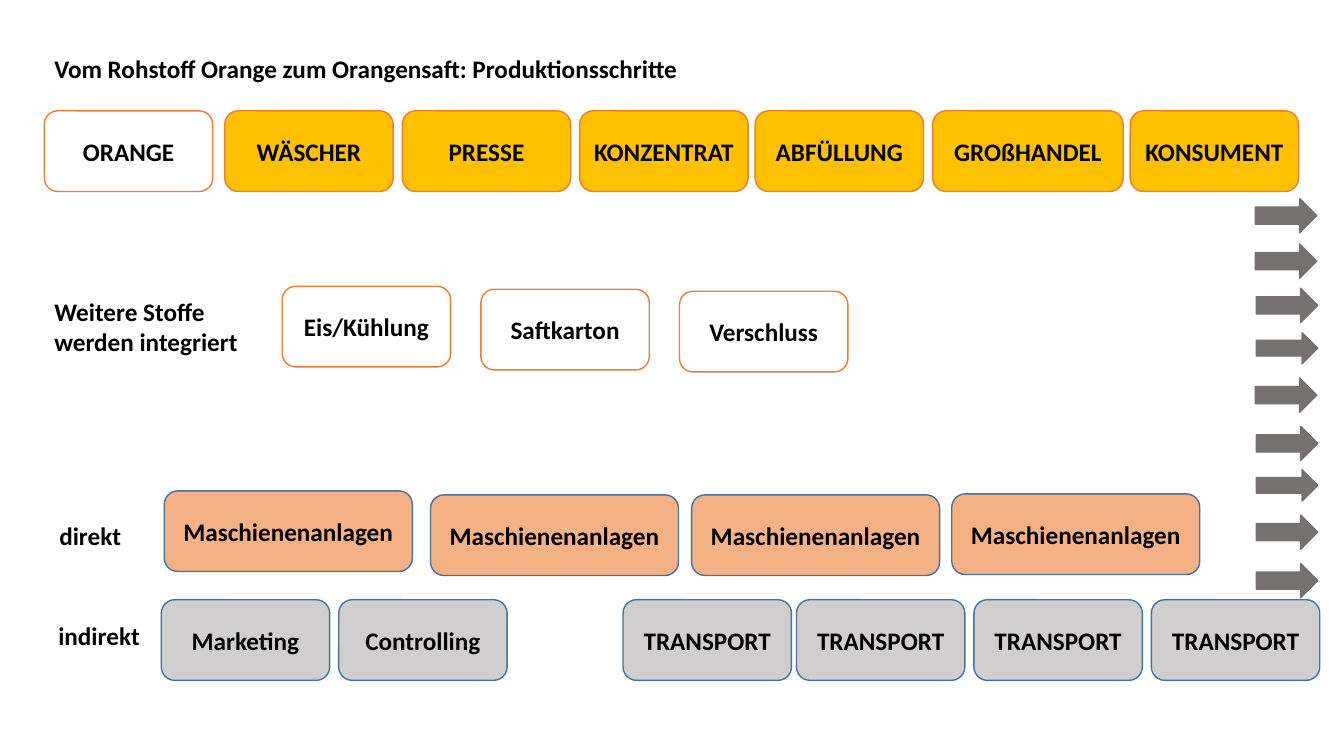
"""Build the slide on the production steps from orange to orange juice."""
from pptx import Presentation
from pptx.dml.color import RGBColor
from pptx.enum.shapes import MSO_SHAPE as SHAPE
from pptx.enum.text import MSO_ANCHOR as ANCHOR, PP_ALIGN as ALIGN
from pptx.util import Inches, Pt

COLORS = {
    "text": "000000",
    "white": "FFFFFF",
    "yellow": "FFC000",
    "orange": "ED7D31",
    "peach": "F4B183",
    "silver": "D0CECE",
    "blue": "43739E",
    "gray": "767171",
}


def add_block(kind, left, top, width, height, fill, line):
    block = page.shapes.add_shape(
        kind, Inches(left), Inches(top), Inches(width), Inches(height))
    block.shadow.inherit = False
    block.fill.solid()
    block.fill.fore_color.rgb = RGBColor.from_string(COLORS[fill])
    block.line.color.rgb = RGBColor.from_string(COLORS[line])
    block.line.width = Pt(1)
    return block


def write_text(box, text, align):
    frame = box.text_frame
    frame.word_wrap = True
    frame.text = text
    for para in frame.paragraphs:
        para.alignment = align
        for span in para.runs:
            span.font.name = "Calibri"
            span.font.size = Pt(18)
            span.font.bold = True
            span.font.color.rgb = RGBColor.from_string(COLORS["text"])


deck = Presentation()
deck.slide_width = Inches(13.33)
deck.slide_height = Inches(7.5)
page = deck.slides.add_slide(deck.slide_layouts[6])

labels = [
    ("Vom Rohstoff Orange zum Orangensaft: Produktionsschritte", 0.44, 0.48, 8.86, 0.4),
    ("Weitere Stoffe\nwerden integriert", 0.44, 2.89, 2.05, 0.71),
    ("direkt", 0.49, 5.11, 1, 0.4),
    ("indirekt", 0.48, 6.1, 1.22, 0.4),
]
for text, left, top, width, height in labels:
    label = page.shapes.add_textbox(
        Inches(left), Inches(top), Inches(width), Inches(height))
    write_text(label, text, ALIGN.LEFT)

block_rows = [
    ("white", "orange", 1.67, [("ORANGE", 0.44, 1.1)]),
    ("yellow", "orange", 1.67, [
        ("WÄSCHER", 2.23, 1.1), ("PRESSE", 3.99, 1.1), ("KONZENTRAT", 5.75, 1.1),
        ("ABFÜLLUNG", 7.49, 1.1), ("KONSUMENT", 11.21, 1.1)]),
    ("yellow", "orange", 1.89, [("GROßHANDEL", 9.25, 1.1)]),
    ("white", "orange", 1.67, [
        ("Eis/Kühlung", 2.8, 2.84), ("Saftkarton", 4.77, 2.87), ("Verschluss", 6.74, 2.89)]),
    ("peach", "blue", 2.46, [
        ("Maschienenanlagen", left, top)
        for left, top in [(1.63, 4.87), (4.27, 4.91), (6.86, 4.91), (9.44, 4.9)]]),
    ("silver", "blue", 1.67, [("Marketing", 1.6, 5.95), ("Controlling", 3.36, 5.95)]),
    ("silver", "blue", 1.67, [
        ("TRANSPORT", left, 5.95) for left in (6.18, 7.9, 9.66, 11.42)]),
]
for fill, line, width, blocks in block_rows:
    for text, left, top in blocks:
        block = add_block(SHAPE.ROUNDED_RECTANGLE, left, top, width, 0.8, fill, line)
        block.text_frame.margin_left = block.text_frame.margin_right = Inches(0.05)
        block.text_frame.vertical_anchor = ANCHOR.MIDDLE
        write_text(block, text, ALIGN.CENTER)

arrows = [
    (12.45, 1.97, 0.34), (12.45, 2.42, 0.34), (12.46, 2.86, 0.34),
    (12.46, 3.3, 0.31), (12.45, 3.75, 0.34), (12.46, 4.23, 0.34),
    (12.46, 4.66, 0.31), (12.46, 5.11, 0.34), (12.46, 5.59, 0.34),
]
for left, top, height in arrows:
    add_block(SHAPE.RIGHT_ARROW, left, top, 0.61, height, "gray", "gray")

deck.save("out.pptx")
